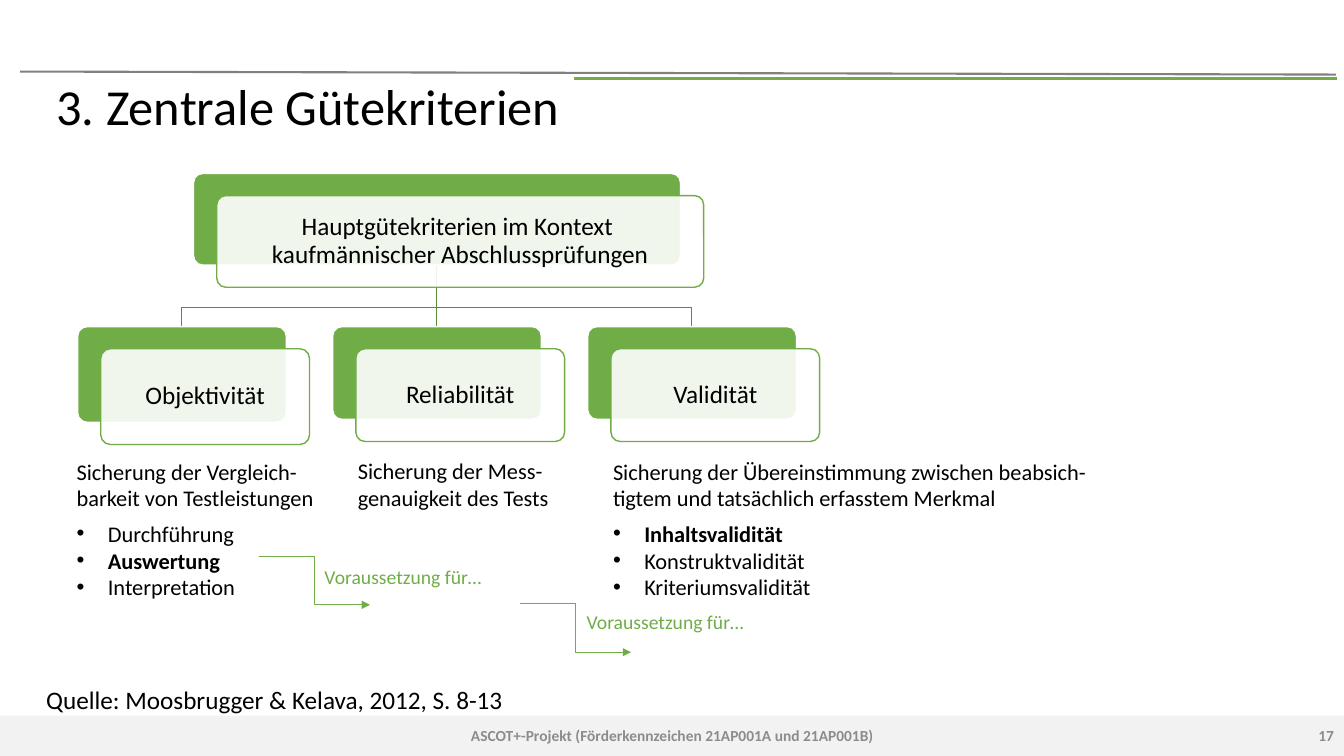
from dataclasses import dataclass

from lxml import etree
from pptx import Presentation
from pptx.dml.color import RGBColor
from pptx.enum.shapes import MSO_CONNECTOR, MSO_SHAPE
from pptx.enum.text import MSO_ANCHOR, MSO_AUTO_SIZE, PP_ALIGN
from pptx.oxml.ns import qn
from pptx.util import Pt

LEFT, CENTER, RIGHT = PP_ALIGN.LEFT, PP_ALIGN.CENTER, PP_ALIGN.RIGHT
TOP, MIDDLE = MSO_ANCHOR.TOP, MSO_ANCHOR.MIDDLE
FIXED = MSO_AUTO_SIZE.NONE
STRAIGHT, ELBOW = MSO_CONNECTOR.STRAIGHT, MSO_CONNECTOR.ELBOW
RECTANGLE, ROUNDED = MSO_SHAPE.RECTANGLE, MSO_SHAPE.ROUNDED_RECTANGLE
EMU_PER_PX = 9144
CARD_SHIFT = (23, 22)
TWO_CONTENT_LAYOUT = 3


@dataclass(frozen=True)
class Theme:
    font: str = "Calibri"
    text: str = "000000"
    paper: str = "FFFFFF"
    green: str = "70AD47"
    branch: str = "5A8B39"
    rule: str = "808080"
    band: str = "F2F2F2"
    muted: str = "8C8C8C"
    title: int = 36
    label: int = 18
    body: int = 16
    note: int = 14
    footer: int = 11


THEME = Theme()


@dataclass(frozen=True)
class Box:
    x: int
    y: int
    w: int
    h: int

    def emu(self) -> list[int]:
        return [px(side) for side in (self.x, self.y, self.w, self.h)]


@dataclass(frozen=True)
class Line:
    text: str
    bullet: bool = False
    bold: bool = False


@dataclass(frozen=True)
class Criterion:
    name: str
    card: Box
    details: Box
    lines: tuple[Line, ...]


def px(length: int) -> int:
    return length * EMU_PER_PX


def rgb(color: str) -> RGBColor:
    return RGBColor.from_string(color)


def write(frame, lines, *, size, color=THEME.text, bold=False, align=LEFT,
          anchor=TOP, spacing=1.0, after=0, inset=None) -> None:
    frame.word_wrap = True
    frame.auto_size = FIXED
    frame.vertical_anchor = anchor
    if inset is not None:
        frame.margin_left = frame.margin_right = px(inset)
        frame.margin_top = frame.margin_bottom = px(inset)
    for index, line in enumerate(lines):
        paragraph = frame.paragraphs[0] if index == 0 else frame.add_paragraph()
        properties = paragraph._p.get_or_add_pPr()
        indent = px(31) if line.bullet else 0
        properties.set("marL", str(indent))
        properties.set("indent", str(-indent))
        if line.bullet:
            etree.SubElement(properties, qn("a:buChar"), char="•")
        else:
            etree.SubElement(properties, qn("a:buNone"))
        paragraph.text = line.text
        paragraph.alignment = align
        paragraph.line_spacing = spacing
        paragraph.space_before = Pt(0)
        paragraph.space_after = Pt(0 if line.bullet else after)
        for run in paragraph.runs:
            run.font.name = THEME.font
            run.font.size = Pt(size)
            run.font.bold = bold or line.bold
            run.font.color.rgb = rgb(color)


def place(placeholder, box: Box):
    placeholder.left, placeholder.top, placeholder.width, placeholder.height = box.emu()
    return placeholder.text_frame


def add_text(shapes, box: Box, text: str, **style) -> None:
    write(shapes.add_textbox(*box.emu()).text_frame, [Line(text)], **style)


def add_panel(shapes, kind, box: Box, fill: str, outline: str | None = None, opacity: int = 100):
    panel = shapes.add_shape(kind, *box.emu())
    panel.shadow.inherit = False
    panel.fill.solid()
    panel.fill.fore_color.rgb = rgb(fill)
    if opacity < 100:
        fill_color = panel.element.spPr.find(".//" + qn("a:srgbClr"))
        etree.SubElement(fill_color, qn("a:alpha"), val=str(opacity * 1000))
    if outline:
        panel.line.color.rgb = rgb(outline)
        panel.line.width = Pt(1)
    else:
        panel.line.fill.background()
    return panel


def add_card(shapes, back: Box, text: str) -> None:
    front = Box(back.x + CARD_SHIFT[0], back.y + CARD_SHIFT[1], back.w, back.h)
    layers = ((back, THEME.green, THEME.paper, 100), (front, THEME.paper, THEME.green, 90))
    for box, fill, outline, opacity in layers:
        card = add_panel(shapes, ROUNDED, box, fill, outline, opacity)
        card.adjustments[0] = 0.1
    write(card.text_frame, [Line(text)], size=THEME.label, align=CENTER,
          anchor=MIDDLE, spacing=0.9, inset=9)


def add_line(shapes, kind, start, end, color: str, width: float, arrow: bool = False) -> None:
    line = shapes.add_connector(kind, *(px(value) for value in (*start, *end)))
    line.line.color.rgb = rgb(color)
    line.line.width = Pt(width)
    if arrow:
        etree.SubElement(line.line._get_or_add_ln(), qn("a:tailEnd"), type="triangle")
    etree.SubElement(line.element.spPr, qn("a:effectLst"))


def add_branch(shapes, points) -> None:
    builder = shapes.build_freeform(*points[0], scale=EMU_PER_PX)
    builder.add_line_segments(points[1:], close=False)
    branch = builder.convert_to_shape()
    branch.shadow.inherit = False
    branch.fill.background()
    branch.line.color.rgb = rgb(THEME.branch)
    branch.line.width = Pt(1)


CRITERIA = (
    Criterion("Objektivität", Box(77, 324, 207, 95), Box(66, 449, 329, 153), (
        Line("Sicherung der Vergleich-\vbarkeit von Testleistungen"),
        Line("Durchführung", bullet=True),
        Line("Auswertung", bullet=True, bold=True),
        Line("Interpretation", bullet=True))),
    Criterion("Reliabilität", Box(330, 324, 207, 92), Box(345, 449, 311, 64), (
        Line("Sicherung der Mess-\vgenauigkeit des Tests"),)),
    Criterion("Validität", Box(583, 324, 207, 92), Box(598, 449, 520, 153), (
        Line("Sicherung der Übereinstimmung zwischen beabsich-tigtem und tatsächlich erfasstem Merkmal"),
        Line("Inhaltsvalidität", bullet=True, bold=True),
        Line("Konstruktvalidität", bullet=True),
        Line("Kriteriumsvalidität", bullet=True))),
)
MAIN_CARD = Box(192, 172, 483, 91)
PREREQUISITES = (
    ((257, 552), (367, 600), Box(312, 556, 187, 34)),
    ((516, 599), (626, 647), Box(572, 600, 187, 34)),
)


def main() -> None:
    deck = Presentation()
    deck.slide_width, deck.slide_height = px(1333), px(750)
    slide = deck.slides.add_slide(deck.slide_layouts[TWO_CONTENT_LAYOUT])
    shapes = slide.shapes

    add_panel(shapes, RECTANGLE, Box(0, 710, 1333, 40), THEME.band)
    add_line(shapes, STRAIGHT, (20, 71), (1325, 74), THEME.rule, 1.5)
    add_line(shapes, STRAIGHT, (569, 78), (1326, 78), THEME.green, 2.25)
    write(place(shapes.title, Box(46, 79, 1220, 59)), [Line("3. Zentrale Gütekriterien")],
          size=THEME.title, anchor=MIDDLE, spacing=0.9)

    trunk, trunk_top, fork = 433, 264, 305
    for criterion in CRITERIA:
        center, top = criterion.card.x + criterion.card.w // 2, criterion.card.y
        if center == trunk:
            add_line(shapes, STRAIGHT, (trunk, trunk_top), (trunk, top), THEME.branch, 1)
        else:
            add_branch(shapes, [(trunk, trunk_top), (trunk, fork), (center, fork), (center, top)])

    add_card(shapes, MAIN_CARD, "Hauptgütekriterien im Kontext \vkaufmännischer Abschlussprüfungen")
    lists = iter([slide.placeholders[1], slide.placeholders[2]])
    for criterion in CRITERIA:
        add_card(shapes, criterion.card, criterion.name)
        if len(criterion.lines) > 1:
            details = place(next(lists), criterion.details)
        else:
            details = shapes.add_textbox(*criterion.details.emu()).text_frame
        write(details, criterion.lines, size=THEME.body, after=6)

    for start, end, caption in PREREQUISITES:
        add_line(shapes, ELBOW, start, end, THEME.green, 0.5, arrow=True)
        add_text(shapes, caption, "Voraussetzung für…", size=THEME.note, color=THEME.green)

    add_text(shapes, Box(36, 674, 774, 40), "Quelle: Moosbrugger & Kelava, 2012, S. 8-13", size=THEME.label)
    footer = {"size": THEME.footer, "color": THEME.muted, "bold": True, "anchor": MIDDLE}
    add_text(shapes, Box(442, 710, 450, 40),
             "ASCOT+-Projekt (Förderkennzeichen 21AP001A und 21AP001B)", align=CENTER, **footer)
    add_text(shapes, Box(1033, 710, 300, 40), "17", align=RIGHT, **footer)
    deck.save("out.pptx")


if __name__ == "__main__":
    main()
